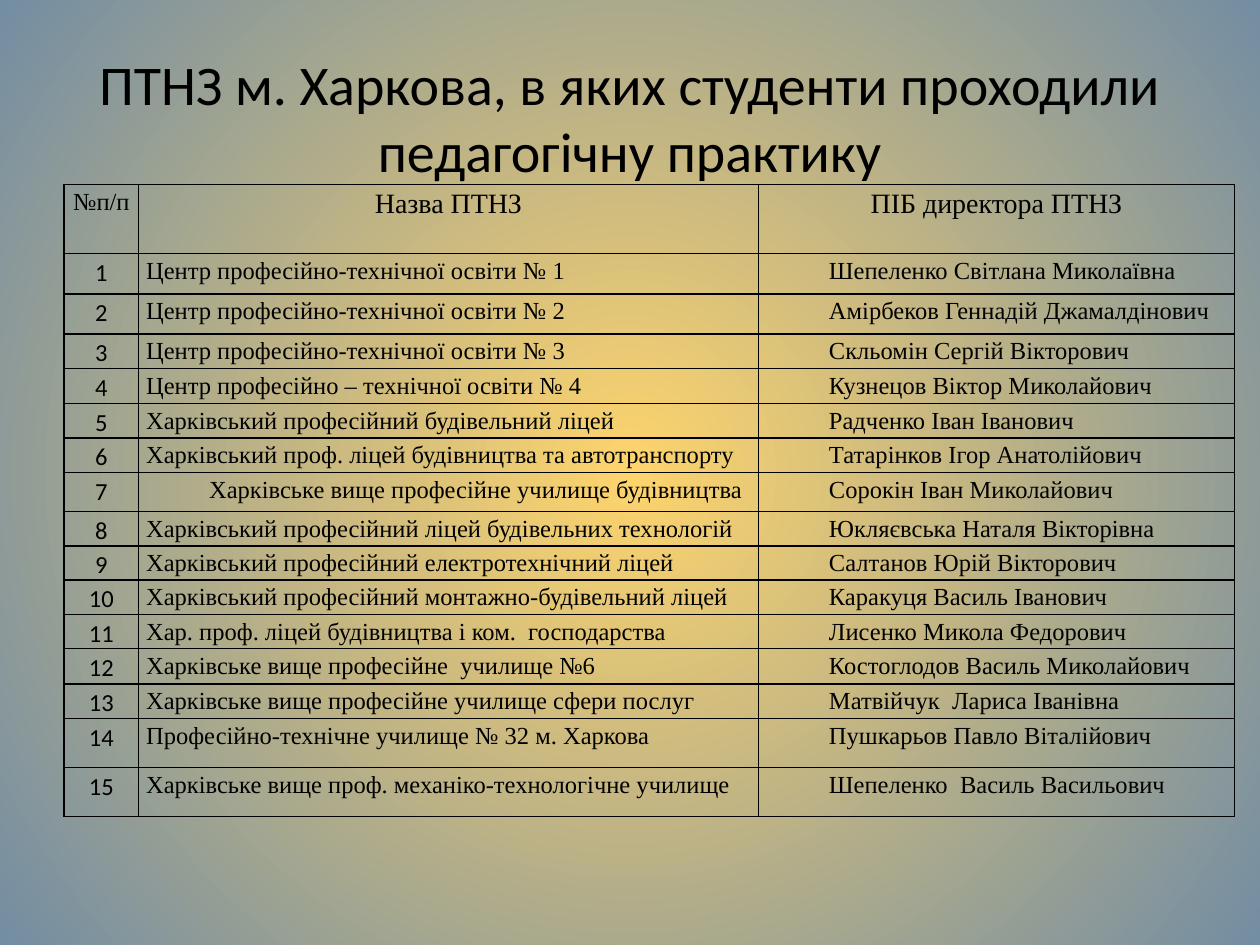
import dataclasses

import pptx
import pptx.dml.color
import pptx.enum.text
import pptx.oxml
import pptx.oxml.ns
import pptx.util

ALIGN = pptx.enum.text.PP_ALIGN
ANCHOR = pptx.enum.text.MSO_ANCHOR
INCH = pptx.util.Inches
WIDE, HIGH = 10, 7.5


@dataclasses.dataclass(frozen=True)
class Theme:
    ink: str = "000000"
    glow: str = "FED46C"
    edge: str = "738DA3"
    sans: str = "Calibri"
    serif: str = "Times New Roman"
    title: int = 32
    head: int = 16
    body: int = 14
    rule: int = 1
    lead: float = 1.15
    pad: float = 0.06
    dent: float = 0.5


THEME = Theme()
TITLE = "ПТНЗ м. Харкова, в яких студенти проходили педагогічну практику"
HEADS = ("№п/п", "Назва ПТНЗ", "ПІБ директора ПТНЗ")
SCHOOLS = (
    ("Центр професійно-технічної освіти № 1", "Шепеленко Світлана Миколаївна"),
    ("Центр професійно-технічної освіти № 2", "Амірбеков Геннадій Джамалдінович"),
    ("Центр професійно-технічної освіти № 3", "Скльомін Сергій Вікторович"),
    ("Центр професійно – технічної освіти № 4", "Кузнецов Віктор Миколайович"),
    ("Харківський професійний будівельний ліцей", "Радченко Іван Іванович"),
    ("Харківський проф. ліцей будівництва та автотранспорту", "Татарінков Ігор Анатолійович"),
    ("Харківське вище професійне училище будівництва", "Сорокін Іван Миколайович"),
    ("Харківський професійний ліцей будівельних технологій", "Юкляєвська Наталя Вікторівна"),
    ("Харківський професійний електротехнічний ліцей", "Салтанов Юрій Вікторович"),
    ("Харківський професійний монтажно-будівельний ліцей", "Каракуця Василь Іванович"),
    ("Хар. проф. ліцей будівництва і ком.  господарства", "Лисенко Микола Федорович"),
    ("Харківське вище професійне  училище №6", "Костоглодов Василь Миколайович"),
    ("Харківське вище професійне училище сфери послуг", "Матвійчук  Лариса Іванівна"),
    ("Професійно-технічне училище № 32 м. Харкова", "Пушкарьов Павло Віталійович"),
    ("Харківське вище проф. механіко-технологічне училище", "Шепеленко  Василь Васильович"),
)
COLS = (0.59, 4.92, 3.78)
ROW = 0.27
TALL = {0: 0.55, 1: 0.32, 2: 0.32, 4: 0.28, 7: 0.31, 12: 0.28, 14: 0.39, 15: 0.39}
DENTED = 7  # the one school whose name is indented


def put(item, values):
    for name, value in values.items():
        setattr(item, name, value)


def tint(code):
    return pptx.dml.color.RGBColor.from_string(code)


def box(x, y, w, h):
    """Turn shares of the slide's size into a place."""
    return {"left": INCH(x * WIDE), "top": INCH(y * HIGH),
            "width": INCH(w * WIDE), "height": INCH(h * HIGH)}


def style(para, face, size, align):
    para.alignment = align
    put(para.font, {"name": face, "size": pptx.util.Pt(size), "bold": False})
    para.font.color.rgb = tint(THEME.ink)


def paint(slide):
    """Fill the background with a glow that spreads from the centre."""
    fill = slide.background.fill
    fill.gradient()
    for stop, code in zip(fill.gradient_stops, (THEME.glow, THEME.edge)):
        stop.color.rgb = tint(code)
    grad = slide.element.find(".//" + pptx.oxml.ns.qn("a:gradFill"))
    grad.remove(grad.find(pptx.oxml.ns.qn("a:lin")))
    grad.append(pptx.oxml.parse_xml(
        f'<a:path {pptx.oxml.ns.nsdecls("a")} path="circle">'
        '<a:fillToRect l="50000" t="50000" r="50000" b="50000"/></a:path>'))


def head(slide):
    title = slide.shapes.title
    put(title, box(0.05, 0.04, 0.9, 1 / 6))
    frame = title.text_frame
    put(frame, {"text": TITLE, "word_wrap": True, "vertical_anchor": ANCHOR.MIDDLE,
                "auto_size": pptx.enum.text.MSO_AUTO_SIZE.NONE})
    style(frame.paragraphs[0], THEME.sans, THEME.title, ALIGN.CENTER)


def frame_cell(cell):
    props = cell._tc.get_or_add_tcPr()
    for side in "LRTB":
        props.append(pptx.oxml.parse_xml(
            f'<a:ln{side} {pptx.oxml.ns.nsdecls("a")} w="{pptx.util.Pt(THEME.rule)}">'
            f'<a:solidFill><a:srgbClr val="{THEME.ink}"/></a:solidFill></a:ln{side}>'))
    cell.fill.background()


def fill_cell(cell, text, face, size, align, dent):
    frame_cell(cell)
    put(cell, {"text": text, "vertical_anchor": ANCHOR.TOP,
               "margin_left": INCH(THEME.pad), "margin_right": INCH(THEME.pad),
               "margin_top": 0, "margin_bottom": 0})
    para = cell.text_frame.paragraphs[0]
    style(para, face, size, align)
    para.line_spacing = THEME.lead
    if dent:
        props = para._p.get_or_add_pPr()
        props.set("marL", str(INCH(THEME.dent)))
        props.set("indent", "0")


def grid(slide):
    rows = [HEADS] + [(str(n), *pair) for n, pair in enumerate(SCHOOLS, 1)]
    highs = [TALL.get(r, ROW) for r in range(len(rows))]
    place = box(0.051, 0.195, sum(COLS) / WIDE, sum(highs) / HIGH)
    table = slide.shapes.add_table(len(rows), len(COLS), **place).table
    put(table, {"first_row": False, "horz_banding": False})
    for col, wide in zip(table.columns, COLS):
        col.width = INCH(wide)
    for r, (row, high) in enumerate(zip(rows, highs)):
        table.rows[r].height = INCH(high)
        for c, text in enumerate(row):
            face = THEME.sans if r and not c else THEME.serif
            size = THEME.head if c and not r else THEME.body
            align = ALIGN.LEFT if r and c else ALIGN.CENTER
            dent = r and (c == 2 or (r, c) == (DENTED, 1))
            fill_cell(table.cell(r, c), text, face, size, align, dent)


def main():
    deck = pptx.Presentation()
    put(deck, {"slide_width": INCH(WIDE), "slide_height": INCH(HIGH)})
    slide = deck.slides.add_slide(deck.slide_layouts[5])
    paint(slide)
    head(slide)
    grid(slide)
    deck.save("out.pptx")


if __name__ == "__main__":
    main()
